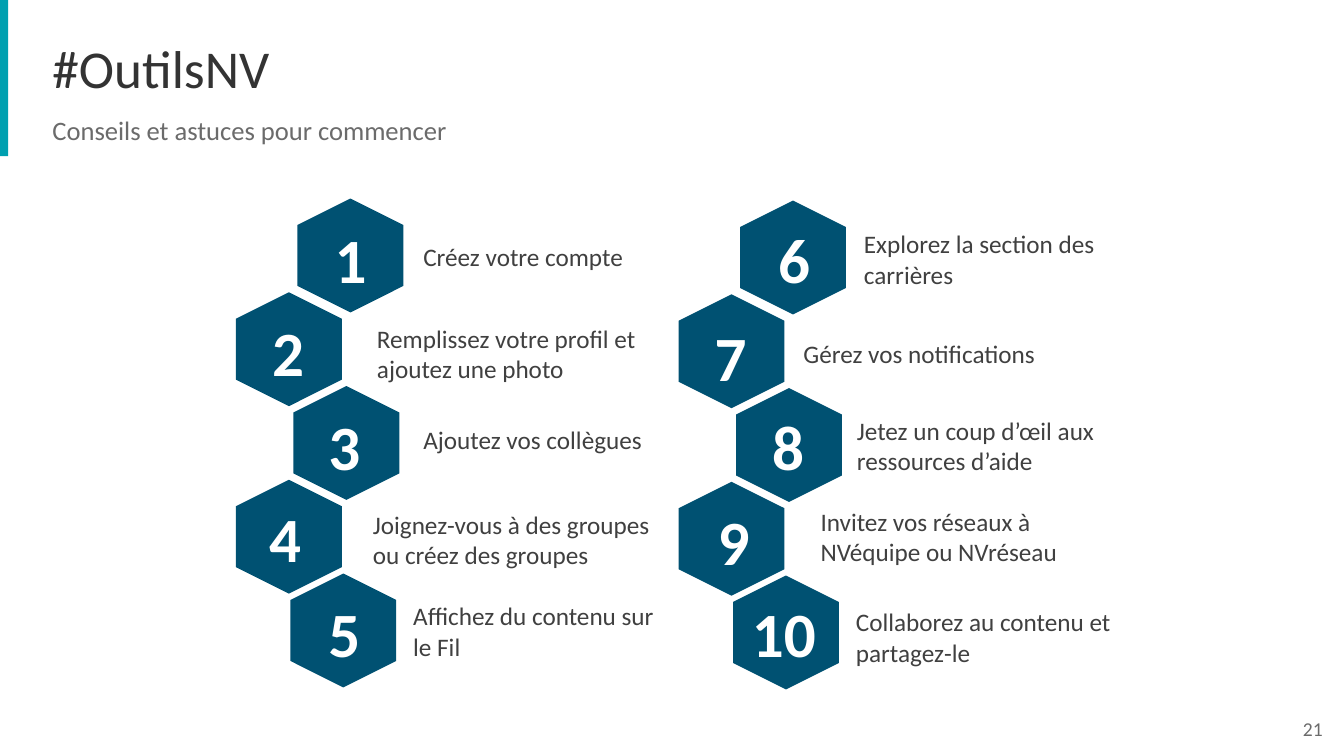
from typing import NamedTuple

from pptx import Presentation
from pptx.dml.color import RGBColor
from pptx.enum.shapes import MSO_SHAPE
from pptx.enum.text import MSO_ANCHOR, PP_ALIGN
from pptx.util import Inches, Pt

HEXAGON, RECT = MSO_SHAPE.HEXAGON, MSO_SHAPE.RECTANGLE
TOP, MIDDLE = MSO_ANCHOR.TOP, MSO_ANCHOR.MIDDLE
LEFT, RIGHT = PP_ALIGN.LEFT, PP_ALIGN.RIGHT

TEAL = RGBColor(0x00, 0xA0, 0xB0)
NAVY = RGBColor(0x00, 0x51, 0x72)
WHITE = RGBColor(0xFF, 0xFF, 0xFF)
DARK = RGBColor(0x33, 0x33, 0x33)
BODY = RGBColor(0x40, 0x40, 0x40)
GREY = RGBColor(0x6B, 0x6B, 0x6B)
FONT = "Calibri"

ROWS = 5
HEX_LEFTS = (2.91, 2.3, 2.87, 2.3, 2.84)
HEX_TOP, HEX_STEP = 2.01, 0.93
COL_STEP, COL_DROP = 4.39, 0.02


class Box(NamedTuple):
    left: float
    top: float
    width: float
    height: float


class Head(NamedTuple):
    text: str
    box: Box
    size: int
    color: RGBColor
    line: float | None = None
    align: PP_ALIGN = LEFT
    anchor: MSO_ANCHOR = TOP


class Tip(NamedTuple):
    text: str
    box: Box
    digit: Box


HEADS = (
    Head("#OutilsNV", Box(0.52, 0.44, 12.71, 0.42), 38, DARK, 39.2),
    Head("Conseils et astuces pour commencer",
         Box(0.52, 1.12, 12.71, 0.23), 19, GREY, 23.4),
    Head("21", Box(12.61, 7.15, 0.51, 0.15), 14, GREY, None, RIGHT, MIDDLE),
)

TIPS = (
    Tip("Créez votre compte",
        Box(4.1, 2.34, 2.78, 0.4), Box(3.22, 2.14, 0.84, 0.86)),
    Tip("Remplissez votre profil et ajoutez une photo",
        Box(3.64, 3.16, 2.78, 0.71), Box(2.6, 3.06, 0.84, 0.86)),
    Tip("Ajoutez vos collègues",
        Box(4.1, 4.16, 2.78, 0.4), Box(3.16, 3.99, 0.84, 0.86)),
    Tip("Joignez-vous à des groupes ou créez des groupes",
        Box(3.6, 5, 3, 0.71), Box(2.57, 4.91, 0.84, 0.86)),
    Tip("Affichez du contenu sur le Fil",
        Box(4, 5.91, 2.78, 0.71), Box(3.16, 5.85, 0.84, 0.86)),
    Tip("Explorez la section des carrières",
        Box(8.47, 2.22, 2.98, 0.71), Box(7.62, 2.14, 0.84, 0.86)),
    Tip("Gérez vos notifications",
        Box(7.87, 3.31, 3.58, 0.4), Box(6.99, 3.11, 0.84, 0.86)),
    Tip("Jetez un coup d’œil aux ressources d’aide",
        Box(8.4, 4.07, 2.78, 0.71), Box(7.56, 3.99, 0.84, 0.86)),
    Tip("Invitez vos réseaux à NVéquipe ou NVréseau",
        Box(8.04, 4.97, 3, 0.71), Box(7.02, 4.94, 0.84, 0.86)),
    Tip("Collaborez au contenu et partagez-le",
        Box(8.39, 5.97, 2.78, 0.71), Box(7.36, 5.85, 1.19, 0.86)),
)


def add_solid(slide, kind: MSO_SHAPE, box: Box, color: RGBColor, turn: int = 0) -> None:
    shape = slide.shapes.add_shape(kind, *map(Inches, box))
    shape.shadow.inherit = False
    shape.fill.solid()
    shape.fill.fore_color.rgb = color
    shape.line.fill.background()
    shape.rotation = turn


def add_text(slide, text: str, box: Box, size: int, color: RGBColor, bold: bool = False):
    """Add a wrapped text box and return its frame."""
    frame = slide.shapes.add_textbox(*map(Inches, box)).text_frame
    frame.word_wrap = True
    frame.text = text
    font = frame.paragraphs[0].runs[0].font
    font.name, font.size, font.bold = FONT, Pt(size), bold
    font.color.rgb = color
    return frame


def add_head(slide, head: Head) -> None:
    frame = add_text(slide, head.text, head.box, head.size, head.color)
    frame.margin_left = frame.margin_right = 0
    frame.margin_top = frame.margin_bottom = 0
    frame.vertical_anchor = head.anchor
    para = frame.paragraphs[0]
    para.alignment = head.align
    para.space_after = Pt(6)
    if head.line:
        para.line_spacing = Pt(head.line)


def add_tip(slide, index: int, tip: Tip) -> None:
    col, row = divmod(index, ROWS)
    left = HEX_LEFTS[row] + col * COL_STEP
    top = HEX_TOP + row * HEX_STEP + col * COL_DROP
    add_solid(slide, HEXAGON, Box(left, top, 1.13, 1.05), NAVY, 90)
    add_text(slide, str(index + 1), tip.digit, 45, WHITE, True)
    add_text(slide, tip.text, tip.box, 18, BODY)


def main() -> None:
    deck = Presentation()
    deck.slide_width, deck.slide_height = Inches(13.33), Inches(7.5)
    slide = deck.slides.add_slide(deck.slide_layouts[6])
    add_solid(slide, RECT, Box(0, 0, 0.08, 1.55), TEAL)
    for head in HEADS:
        add_head(slide, head)
    for index, tip in enumerate(TIPS):
        add_tip(slide, index, tip)
    deck.save("out.pptx")


if __name__ == "__main__":
    main()
